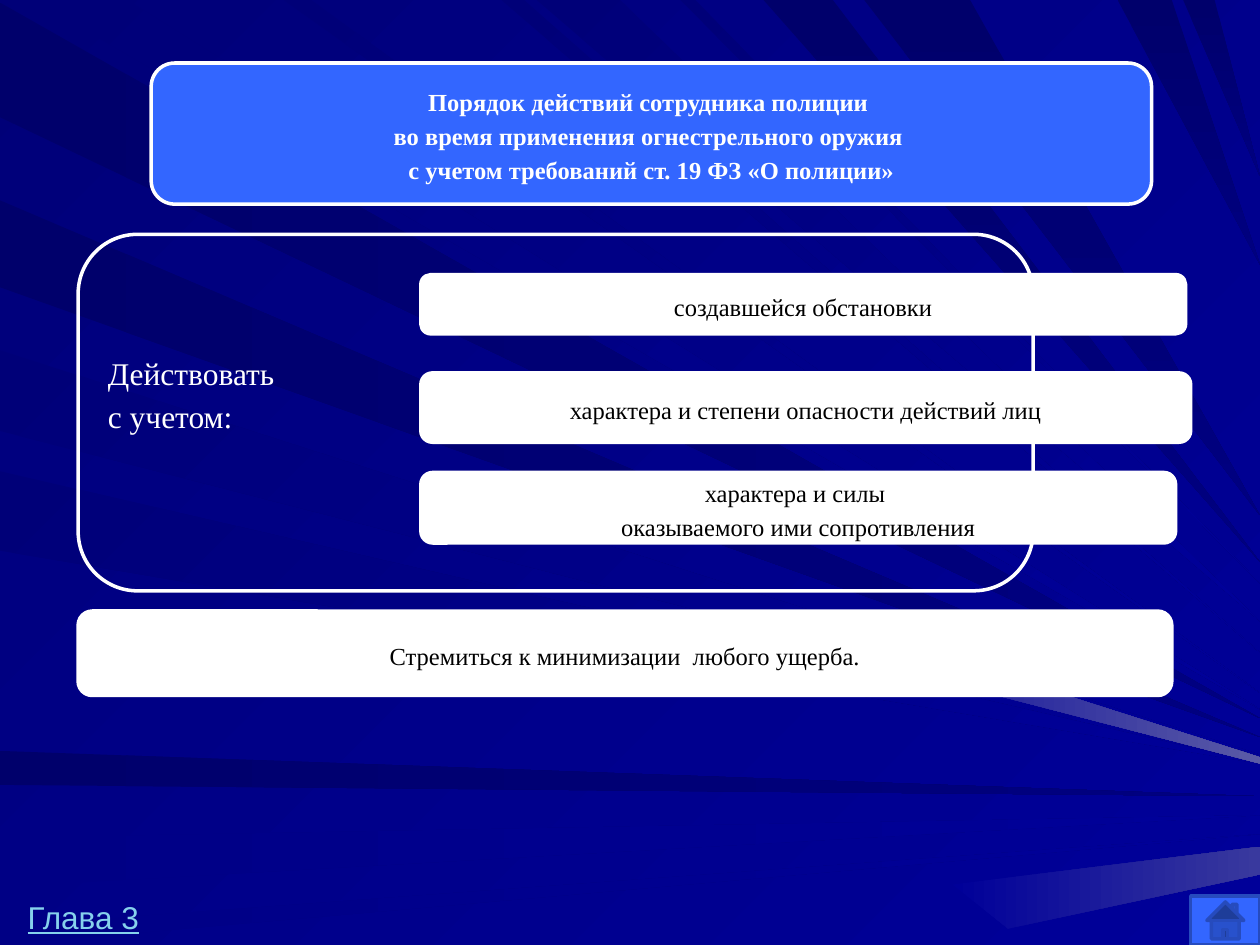
from dataclasses import dataclass

from pptx import Presentation
from pptx.dml.color import RGBColor
from pptx.enum.shapes import MSO_SHAPE
from pptx.enum.text import MSO_ANCHOR, MSO_AUTO_SIZE, PP_ALIGN
from pptx.slide import Slide
from pptx.util import Pt

PX = 9144  # EMU in one px, 100 px to the inch
WIDTH, HEIGHT = 1000, 750

WHITE = RGBColor(0xFF, 0xFF, 0xFF)
BLACK = RGBColor(0x00, 0x00, 0x00)
BLUE = RGBColor(0x33, 0x66, 0xFF)
DARK_BLUE = RGBColor(0x26, 0x4B, 0xBD)
LINK = RGBColor(0x86, 0xD1, 0xEC)
MIDNIGHT = RGBColor(0x00, 0x00, 0x6B)
DEEP = RGBColor(0x00, 0x00, 0x78)
SOFT = RGBColor(0x00, 0x00, 0x85)
NAVY = RGBColor(0x00, 0x00, 0x80)
ROYAL = RGBColor(0x00, 0x00, 0x99)
GLOW = RGBColor(0x5A, 0x5A, 0xA6)
GLOW_LOW = RGBColor(0x39, 0x39, 0x9E)

# Rays run from a stretch of the left or top edge to a tip on the right edge:
# start colour, end colour, angle, and (stretch start, stretch end, tip height)
LEFT_RAYS = [
    (MIDNIGHT, NAVY, 0, [(2, 93, 570), (596, 623, 632), (159, 228, 585)]),
    (SOFT, ROYAL, 0, [(665, 704, 647), (735, 750, 662)]),
    (DEEP, ROYAL, 45, [(278, 342, 599), (374, 437, 606)]),
]
TOP_RAYS = [
    (DEEP, ROYAL, 45, [(26, 101, 563), (225, 247, 550), (398, 416, 518),
                       (426, 492, 493), (540, 552, 463)]),
    (MIDNIGHT, NAVY, 90, [(606, 661, 446), (686, 770, 409), (887, 930, 210),
                          (939, 964, 140)]),
]
# Light patches at the right edge
PATCHES = [
    (GLOW_LOW, [(756, 702), (WIDTH, 672), (WIDTH, 694), (800, 737)]),
    (GLOW, [(637, 485), (WIDTH, 601), (WIDTH, 606), (633, 511)]),
]

TITLE_LINES = [
    "Порядок действий сотрудника полиции ",
    "во время применения огнестрельного оружия ",
    "с учетом требований ст. 19 ФЗ «О полиции»",
]

# White cards: place and lines
CARDS = [
    ((334, 218, 607, 47), ["создавшейся обстановки"]),
    ((334, 296, 611, 55), ["характера и степени опасности действий лиц"]),
    ((334, 375, 599, 56), ["характера и силы ", "оказываемого ими сопротивления"]),
    ((62, 485, 868, 67), ["Стремиться к минимизации  любого ущерба."]),
]


@dataclass
class SlideBuilder:
    slide: Slide
    font: str = "Times New Roman"
    size: int = 14
    spacing: float = 1.15
    line_width: int = 2

    def gradient(self, fill, start, end, angle):
        """Fill with a gradient turned clockwise."""
        fill.gradient()
        fill.gradient_angle = (360 - angle) % 360
        for stop, color in zip(fill.gradient_stops, (start, end)):
            stop.color.rgb = color

    def ray(self, start, end, angle, corners):
        builder = self.slide.shapes.build_freeform(*corners[0], scale=PX)
        builder.add_line_segments(corners[1:], close=True)
        shape = builder.convert_to_shape()
        shape.shadow.inherit = False
        shape.line.fill.background()
        self.gradient(shape.fill, start, end, angle)

    def box(self, kind, place, fill, line):
        shape = self.slide.shapes.add_shape(kind, *(PX * value for value in place))
        shape.shadow.inherit = False
        if fill is None:
            shape.fill.background()
        else:
            shape.fill.solid()
            shape.fill.fore_color.rgb = fill
        shape.line.color.rgb = line
        shape.line.width = Pt(self.line_width)
        return shape

    def text(self, shape, lines, color, align=PP_ALIGN.CENTER, size=None, bold=False):
        frame = shape.text_frame
        frame.word_wrap = True
        frame.auto_size = MSO_AUTO_SIZE.NONE
        frame.vertical_anchor = MSO_ANCHOR.MIDDLE
        for index, line in enumerate(lines):
            paragraph = frame.add_paragraph() if index else frame.paragraphs[0]
            paragraph.alignment = align
            paragraph.line_spacing = self.spacing
            paragraph.space_before = Pt(0)
            self.run(paragraph, line, self.font, size or self.size, color, bold)

    def run(self, paragraph, words, font, size, color, bold=False):
        run = paragraph.add_run()
        run.text = words
        run.font.name = font
        run.font.size = Pt(size)
        run.font.bold = bold
        run.font.color.rgb = color
        return run

    def title(self, place, lines):
        self.box(MSO_SHAPE.ROUNDED_RECTANGLE, place, BLUE, WHITE)
        title = self.slide.shapes.title
        title.left, title.top, title.width, title.height = (PX * value for value in place)
        title.element.getparent().append(title.element)  # in front of its panel
        self.text(title, lines, WHITE, bold=True)

    def chapter_label(self, place, words):
        label = self.slide.shapes.add_textbox(*(PX * value for value in place))
        label.text_frame.word_wrap = False
        run = self.run(label.text_frame.paragraphs[0], words, "Arial", 18, LINK)
        run.font.underline = True


def main():
    presentation = Presentation()
    presentation.slide_width, presentation.slide_height = WIDTH * PX, HEIGHT * PX
    slide = presentation.slides.add_slide(presentation.slide_layouts[5])
    builder = SlideBuilder(slide)

    # Background
    builder.gradient(slide.background.fill, DEEP, ROYAL, 45)
    for start, end, angle, rays in LEFT_RAYS:
        for first, last, tip in rays:
            builder.ray(start, end, angle, [(0, first), (0, last), (WIDTH, tip)])
    for start, end, angle, rays in TOP_RAYS:
        for first, last, tip in rays:
            builder.ray(start, end, angle, [(first, 0), (last, 0), (WIDTH, tip)])
    for end, corners in PATCHES:
        builder.ray(ROYAL, end, 0, corners)

    # Home button
    builder.box(MSO_SHAPE.ACTION_BUTTON_HOME, (945, 711, 55, 39), BLUE, DARK_BLUE)

    # Heading
    builder.title((120, 50, 794, 112), TITLE_LINES)

    # Outlined group with its label, raised by a deeper bottom margin
    group = builder.box(MSO_SHAPE.ROUNDED_RECTANGLE, (62, 186, 758, 283), None, WHITE)
    group.text_frame.margin_bottom = 38 * PX
    builder.text(group, ["Действовать", "с учетом:"], WHITE, PP_ALIGN.LEFT, 18)

    # Cards
    for place, lines in CARDS:
        card = builder.box(MSO_SHAPE.ROUNDED_RECTANGLE, place, WHITE, WHITE)
        builder.text(card, lines, BLACK)

    # Chapter label
    builder.chapter_label((12, 708, 109, 40), "Глава 3")

    presentation.save("out.pptx")


if __name__ == "__main__":
    main()
